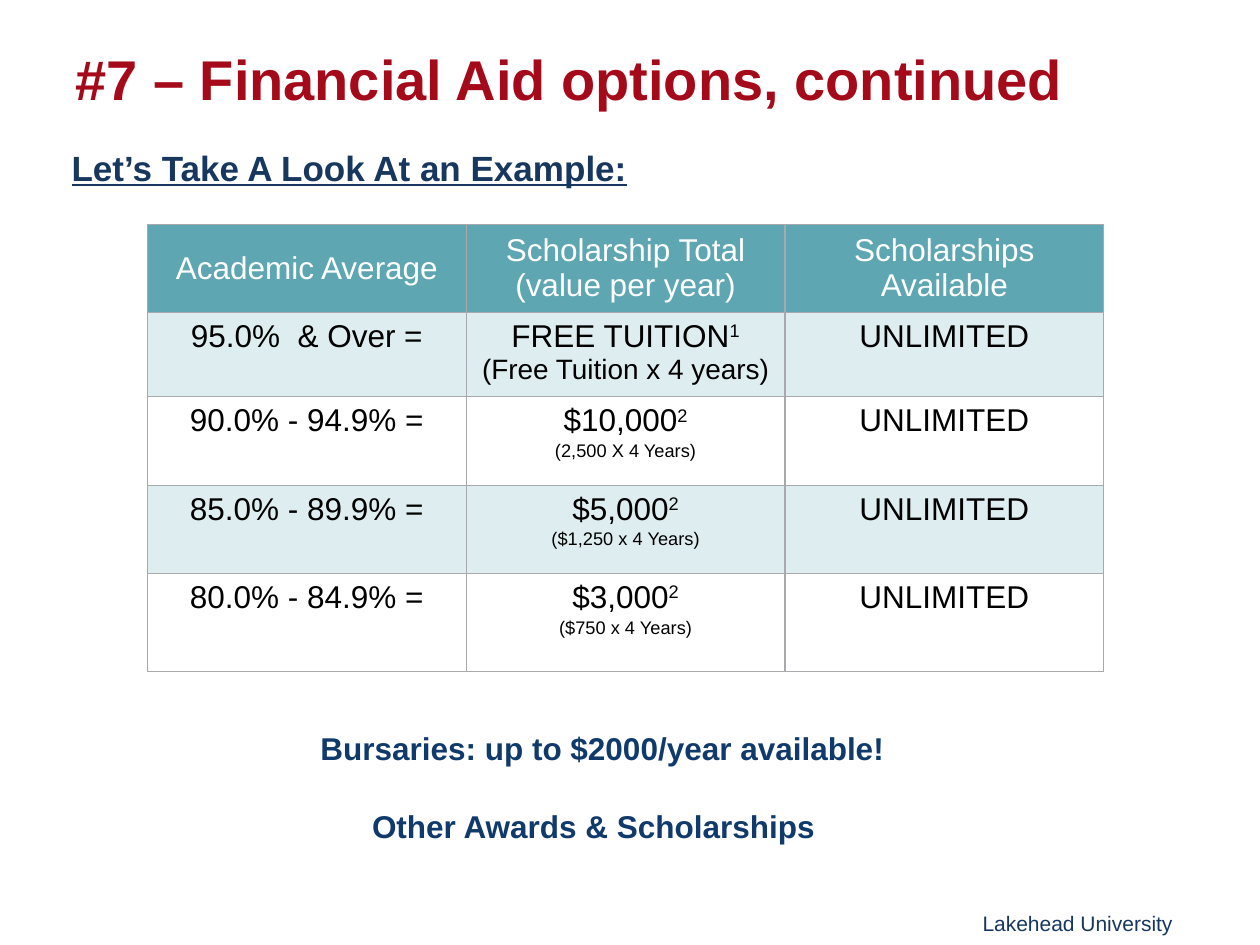
"""Build the financial aid slide with its scholarship table."""
from lxml import etree
from pptx import Presentation
from pptx import util as u
from pptx.dml.color import RGBColor
from pptx.enum import text
from pptx.oxml.ns import qn


def rgb(value):
    return RGBColor.from_string(value)


def add_run(p, words, size, color, raised=False, **fmt):
    r = p.add_run()
    r.text = words
    r.font.color.rgb = rgb(color)
    for key, value in {"name": "Arial", "size": u.Pt(size), **fmt}.items():
        setattr(r.font, key, value)
    if raised:
        r._r.get_or_add_rPr().set("baseline", "30000")


prs = Presentation()
prs.slide_width, prs.slide_height = u.Inches(10), u.Inches(7.5)
s = prs.slides.add_slide(prs.slide_layouts[6])

CENTER = text.PP_ALIGN.CENTER
BOLD = {"bold": True}
boxes = [
    ((7.7, 7.18, 3.43, 0.3), ["Lakehead University"], 12, "17375E", None, {}),
    ((0.5, 0.3, 9.34, 1.25), ["#7 – Financial Aid options, continued"], 32, "A50A1A", None, BOLD),
    ((0.47, 1.11, 9, 0.5), ["Let’s Take A Look At an Example:"], 20, "17375E", None,
     {"bold": True, "underline": True}),
    ((1.17, 5.74, 7.22, 1.01), ["Bursaries: up to $2000/year available!", "Other Awards & Scholarships"],
     18, "103A6C", CENTER, BOLD),
]
for place, lines, size, color, align, fmt in boxes:
    tf = s.shapes.add_textbox(*map(u.Inches, place)).text_frame
    tf.word_wrap = True
    for i, line in enumerate(lines):
        p = tf.paragraphs[0] if i == 0 else tf.add_paragraph()
        p.alignment = align
        if i:
            p.space_before = u.Pt(22.5)
            p._p.get_or_add_pPr().set("marR", str(u.Inches(0.14)))
        add_run(p, line, size, color, **fmt)

header = ["Academic Average", "Scholarship Total\n(value per year)", "Scholarships Available"]
awards = [
    ("95.0%  & Over =", "FREE TUITION", "1", "(Free Tuition x 4 years)"),
    ("90.0% - 94.9% =", "$10,000", "2", "(2,500 X 4 Years)"),
    ("85.0% - 89.9% =", "$5,000", "2", "($1,250 x 4 Years)"),
    ("80.0% - 84.9% =", "$3,000", "2", "($750 x 4 Years)"),
]
heights = [0.7, 0.67, 0.7, 0.7, 0.78]
col_width = 2.53
table = s.shapes.add_table(5, 3, u.Inches(1.17), u.Inches(1.78), u.Inches(3 * col_width),
                           u.Inches(sum(heights))).table
for col in table.columns:
    col.width = u.Inches(col_width)
for row, height in zip(table.rows, heights):
    row.height = u.Inches(height)

for i in range(5):
    for j in range(3):
        cell = table.cell(i, j)
        p = cell.text_frame.paragraphs[0]
        p.alignment = CENTER
        if i == 0:
            cell.vertical_anchor = text.MSO_ANCHOR.MIDDLE
            for n, line in enumerate(header[j].split("\n")):
                if n:
                    p.add_line_break()
                add_run(p, line, 18, "FFFFFF", bold=False)
        elif j == 1:
            average, total, note, detail = awards[i - 1]
            add_run(p, total, 18, "000000")
            add_run(p, note, 18, "000000", raised=True)
            p.add_line_break()
            add_run(p, detail, 16 if i == 1 else 18, "000000", raised=i > 1)
        else:
            add_run(p, awards[i - 1][0] if j == 0 else "UNLIMITED", 18, "000000")
        tcPr = cell._tc.get_or_add_tcPr()
        for side in ("lnL", "lnR", "lnT", "lnB"):
            ln = etree.SubElement(tcPr, qn("a:" + side), w=str(u.Pt(0.75)))
            fill = etree.SubElement(ln, qn("a:solidFill"))
            etree.SubElement(fill, qn("a:srgbClr"), val="A7A9AC")
        cell.fill.solid()
        cell.fill.fore_color.rgb = rgb("5DA6B2" if i == 0 else "DEEDEF" if i % 2 else "FFFFFF")

prs.save("out.pptx")
